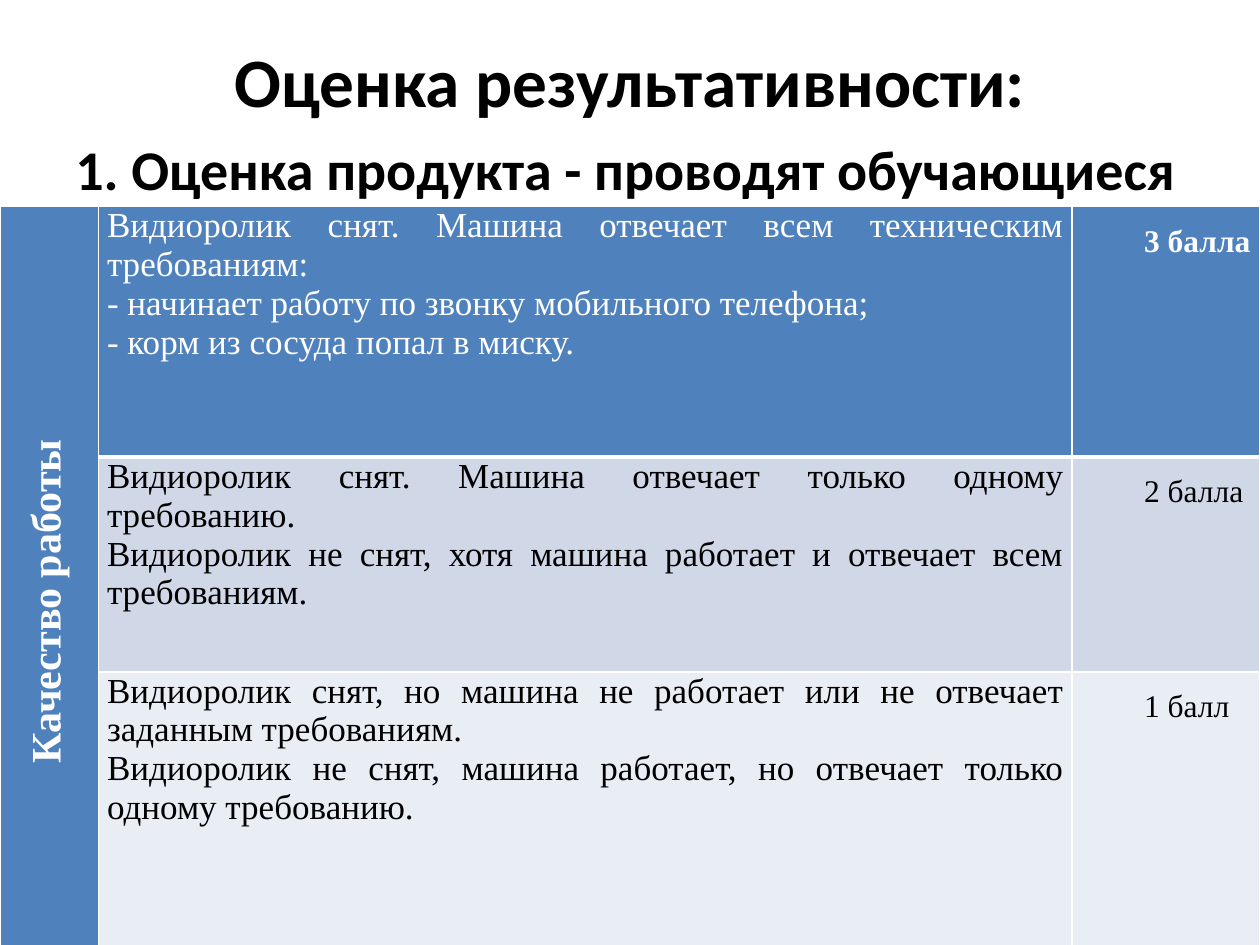
import pptx
import pptx.util
import pptx.dml.color
import pptx.enum.text
import pptx.oxml
import pptx.oxml.ns
from dataclasses import dataclass

Inches, Pt = pptx.util.Inches, pptx.util.Pt
Color = pptx.dml.color.RGBColor.from_string
Align = pptx.enum.text.PP_ALIGN
Anchor = pptx.enum.text.MSO_ANCHOR


@dataclass(frozen=True)
class Theme:
    heading_font: str = "Calibri"
    table_font: str = "Times New Roman"
    dark: str = "000000"
    light: str = "FFFFFF"
    bands: tuple = ("4F81BD", "D0D8E8", "E9EDF4")
    title_size: float = 39.6
    subtitle_size: float = 32
    side_size: float = 24
    criteria_size: float = 20
    score_size: float = 18


THEME = Theme()
WIDTH, HEIGHT = 10, 7.5
TITLE_BOX = (0.5, 0.3, 9, 1.25)
SUBTITLE_BOX = (0.5, 1.02, 9, 5.68)
TABLE_BOX = (0, 1.64, 10, 5.68)
COLUMN_SHARES = (0.078, 0.773, 0.149)
ROW_SHARES = (0.35, 0.3, 0.35)

SIDE_LABEL = "Качество работы"
LEVELS = [
    (["Видиоролик снят. Машина отвечает всем техническим требованиям:",
      "- начинает работу по звонку мобильного телефона;",
      "- корм из сосуда попал в миску."], "3 балла"),
    (["Видиоролик снят. Машина отвечает только одному требованию.",
      "Видиоролик не снят, хотя машина работает и отвечает всем требованиям."],
     "2 балла"),
    (["Видиоролик снят, но машина не работает или не отвечает заданным требованиям.",
      "Видиоролик не снят, машина работает, но отвечает только одному требованию."],
     "1 балл"),
]


def write(frame, lines, font, color, para_format, indents=None):
    """Fill a text frame with equally formatted paragraphs."""
    for index, line in enumerate(lines):
        para = frame.paragraphs[0] if index == 0 else frame.add_paragraph()
        for name, value in para_format.items():
            setattr(para, name, value)
        for name, value in (indents or {}).items():
            para._p.get_or_add_pPr().set(name, str(Inches(value)))
        span = para.add_run()
        span.text = line
        for name, value in font.items():
            setattr(span.font, name, value)
        span.font.color.rgb = Color(color)


def add_heading(page, box, line, size, top_margin, para_format, indents=None):
    """Place one bold heading at the top of its box."""
    frame = page.shapes.add_textbox(*map(Inches, box)).text_frame
    settings = {"word_wrap": True, "vertical_anchor": Anchor.TOP,
                "margin_top": Inches(top_margin)}
    for name, value in settings.items():
        setattr(frame, name, value)
    font = {"name": THEME.heading_font, "size": Pt(size), "bold": True}
    write(frame, [line], font, THEME.dark, para_format, indents)


def style_cell(cell, fill, bottom_width):
    """Set the margins, fill and white borders of a cell."""
    margins = {"margin_left": 0.07, "margin_right": 0.07,
               "margin_top": 0, "margin_bottom": 0}
    for name, value in margins.items():
        setattr(cell, name, Inches(value))
    cell.fill.solid()
    cell.fill.fore_color.rgb = Color(fill)
    properties = cell._tc.get_or_add_tcPr()
    widths = {"lnL": 1, "lnR": 1, "lnT": 1, "lnB": bottom_width}
    for place, (edge, width) in enumerate(widths.items()):
        properties.insert(place, pptx.oxml.parse_xml(
            f'<a:{edge} {pptx.oxml.ns.nsdecls("a")} w="{Pt(width)}"><a:solidFill>'
            f'<a:srgbClr val="{THEME.light}"/></a:solidFill></a:{edge}>'))


def add_score_table(page, box):
    """Place the grading table: side label, criteria and scores."""
    table = page.shapes.add_table(
        len(ROW_SHARES), len(COLUMN_SHARES), *map(Inches, box)).table
    table.first_row = table.horz_banding = False
    for column, share in zip(table.columns, COLUMN_SHARES):
        column.width = Inches(box[2] * share)
    for row, share in zip(table.rows, ROW_SHARES):
        row.height = Inches(box[3] * share)

    # Criteria and scores
    for index, (criteria, score) in enumerate(LEVELS):
        is_top = index == 0
        color = THEME.light if is_top else THEME.dark
        for column in range(len(COLUMN_SHARES)):
            fill = THEME.bands[0 if column == 0 else index]
            style_cell(table.cell(index, column), fill, 3 if is_top else 1)
        font = {"name": THEME.table_font, "size": Pt(THEME.criteria_size), "bold": False}
        write(table.cell(index, 1).text_frame, criteria, font, color,
              {"alignment": Align.JUSTIFY})
        font.update(size=Pt(THEME.score_size), bold=is_top)
        write(table.cell(index, 2).text_frame, [score], font, color,
              {"alignment": Align.JUSTIFY, "line_spacing": 1.5},
              {"marL": 0.5, "indent": 0})

    # Rotated label across all rows
    side = table.cell(0, 0)
    side.merge(table.cell(len(LEVELS) - 1, 0))
    side._tc.get_or_add_tcPr().set("vert", "vert270")
    font = {"name": THEME.table_font, "size": Pt(THEME.side_size), "bold": True}
    write(side.text_frame, [SIDE_LABEL], font, THEME.light,
          {"alignment": Align.CENTER, "line_spacing": 1.5})


def main():
    deck = pptx.Presentation()
    deck.slide_width, deck.slide_height = Inches(WIDTH), Inches(HEIGHT)
    page = deck.slides.add_slide(deck.slide_layouts[6])
    add_heading(page, TITLE_BOX, "Оценка результативности:", THEME.title_size, 0,
                {"alignment": Align.CENTER})
    add_heading(page, SUBTITLE_BOX, "1. Оценка продукта - проводят обучающиеся",
                THEME.subtitle_size, 0.05,
                {"space_before": Pt(0.2 * THEME.subtitle_size)},
                {"marL": 0.38, "indent": -0.38})
    add_score_table(page, TABLE_BOX)
    deck.save("out.pptx")


if __name__ == "__main__":
    main()
